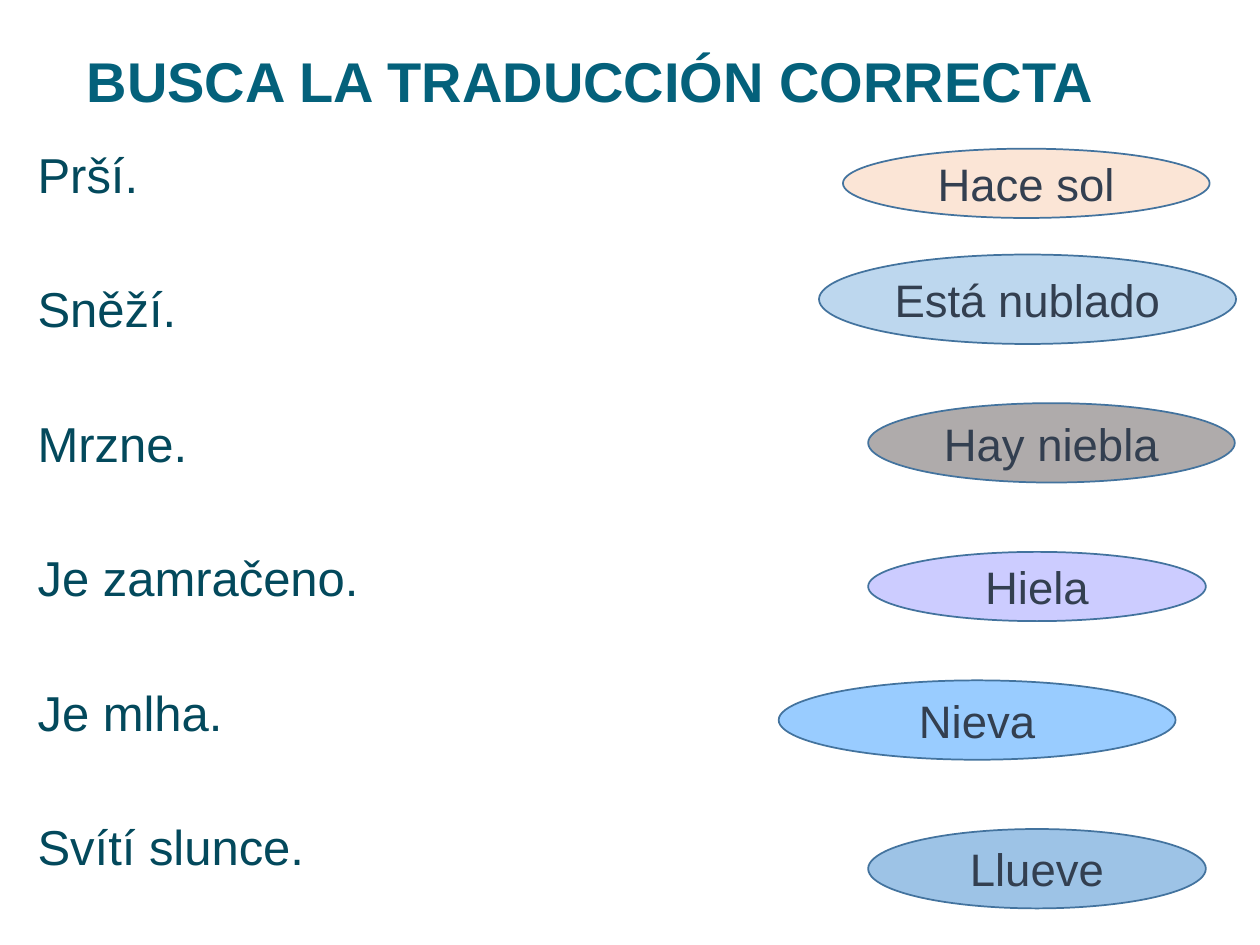
"""Build a matching exercise pairing Czech weather phrases with Spanish ones."""
from pptx import Presentation
from pptx.dml.color import RGBColor
from pptx.enum import shapes, text
from pptx.util import Inches, Pt

TITLE = "BUSCA LA TRADUCCIÓN CORRECTA"
CZECH = ["Prší.", "Sněží.", "Mrzne.", "Je zamračeno.", "Je mlha.", "Svítí slunce."]
SPANISH = [
    ("Hace sol", "FBE5D6", (6.69, 1.18, 2.91, 0.55)),
    ("Está nublado", "BDD7EE", (6.5, 2.02, 3.31, 0.71)),
    ("Hay niebla", "AFABAB", (6.89, 3.2, 2.91, 0.63)),
    ("Hiela", "CCCCFF", (6.89, 4.38, 2.68, 0.55)),
    ("Nieva", "99CCFF", (6.18, 5.4, 3.15, 0.63)),
    ("Llueve", "9DC3E6", (6.89, 6.58, 2.68, 0.63)),
]
PHRASE_GAP = 46.6


def color(value):
    return RGBColor.from_string(value)


def write(shape, lines, size, ink, anchor, align, bold=False, spacing=1.0, gap=0):
    frame = shape.text_frame
    frame.word_wrap = True
    frame.vertical_anchor = anchor
    frame.text = "\n".join(lines)
    for index, paragraph in enumerate(frame.paragraphs):
        paragraph.alignment = align
        paragraph.line_spacing = spacing
        paragraph.space_before = Pt(gap if index else 0)
        font = paragraph.font
        font.name, font.size, font.bold = "Arial", Pt(size), bold
        font.color.rgb = color(ink)


def add_bubble(slide, phrase, fill, box):
    bubble = slide.shapes.add_shape(shapes.MSO_SHAPE.OVAL, *map(Inches, box))
    bubble.shadow.inherit = False
    bubble.fill.solid()
    bubble.fill.fore_color.rgb = color(fill)
    bubble.line.color.rgb = color("43739E")
    bubble.line.width = Pt(1)
    write(bubble, [phrase], 26, "333F50", text.MSO_ANCHOR.MIDDLE, text.PP_ALIGN.CENTER)


def main():
    deck = Presentation()
    deck.slide_width, deck.slide_height = Inches(10), Inches(7.5)
    slide = deck.slides.add_slide(deck.slide_layouts[6])
    title = slide.shapes.add_textbox(*map(Inches, (0.59, 0.36, 9, 0.62)))
    write(title, [TITLE], 32, "04617B", text.MSO_ANCHOR.MIDDLE, text.PP_ALIGN.LEFT,
          bold=True, spacing=0.9)
    phrases = slide.shapes.add_textbox(*map(Inches, (0.2, 1.15, 9.61, 6.22)))
    write(phrases, CZECH, 28, "03495C", text.MSO_ANCHOR.TOP, text.PP_ALIGN.LEFT,
          spacing=0.9, gap=PHRASE_GAP)
    for phrase, fill, box in SPANISH:
        add_bubble(slide, phrase, fill, box)
    deck.save("out.pptx")


if __name__ == "__main__":
    main()
